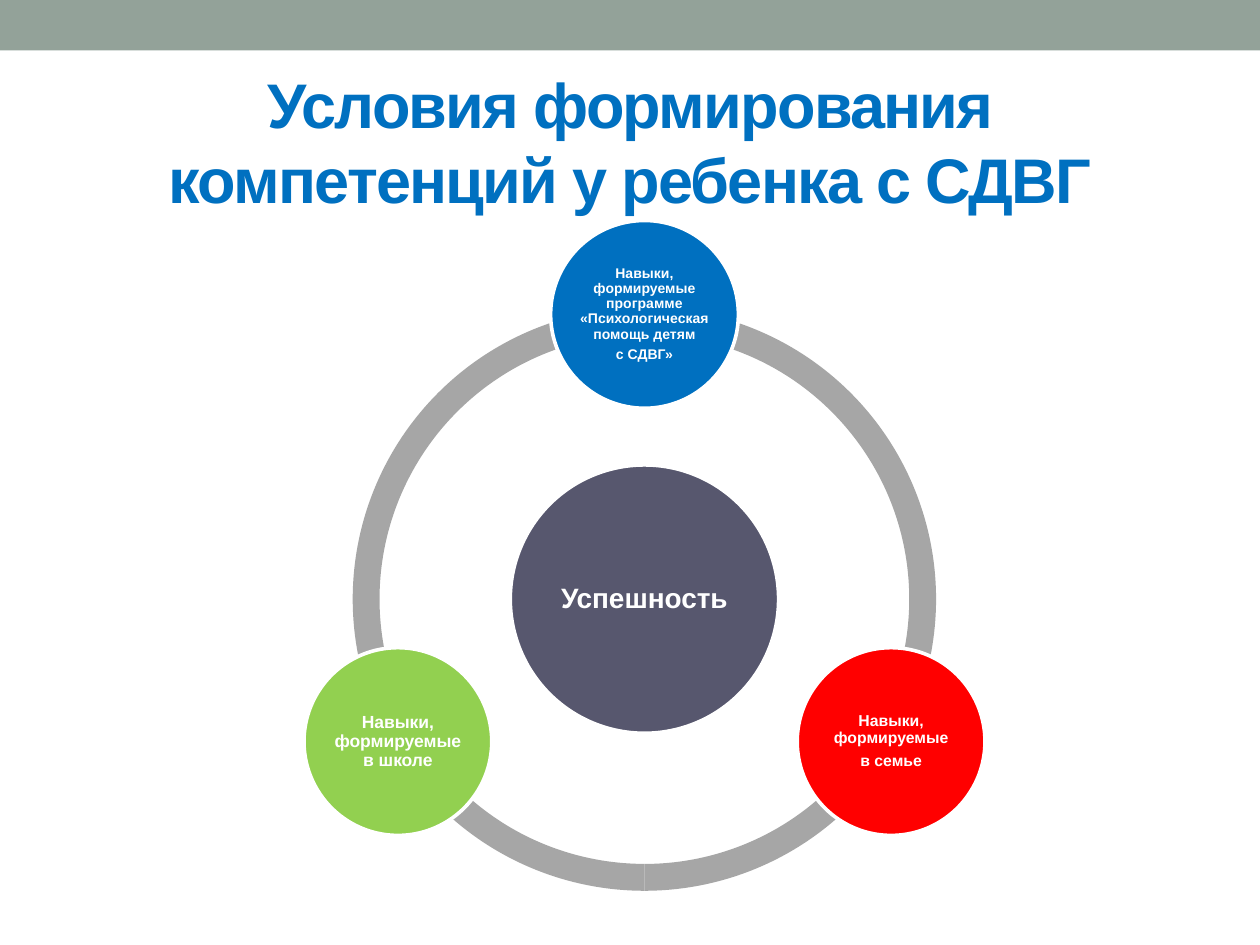
import math
from dataclasses import dataclass

from pptx import Presentation
from pptx import util as u
from pptx.dml.color import RGBColor
from pptx.enum import shapes, text


@dataclass(frozen=True)
class Theme:
    font: str = "Arial"
    band: str = "93A299"
    accent: str = "0070C0"
    ring: str = "A6A6A6"
    core: str = "57576E"
    family: str = "FF0000"
    school: str = "92D050"
    light: str = "FFFFFF"
    title_size: int = 36
    core_size: int = 16
    program_size: int = 8
    family_size: int = 9
    school_size: int = 10
    outline: float = 2.08


THEME = Theme()
WIDTH, HEIGHT = u.Inches(10), u.Inches(7.5)
CENTER_X, CENTER_Y = 0.5115 * WIDTH, 0.634 * HEIGHT
RING = 0.463 * WIDTH
ORBIT = 0.226 * WIDTH
CORE = 0.213 * WIDTH
SATELLITE = 0.149 * WIDTH


def color(value):
    return RGBColor.from_string(value)


def add_filled(page, kind, left, top, width, height, fill):
    shape = page.shapes.add_shape(kind, int(left), int(top), int(width), int(height))
    shape.shadow.inherit = False
    shape.fill.solid()
    shape.fill.fore_color.rgb = color(fill)
    shape.line.fill.background()
    return shape


def add_span(para, words, size, ink):
    span = para.add_run()
    span.text = words
    span.font.name = THEME.font
    span.font.size = u.Pt(size)
    span.font.bold = True
    span.font.color.rgb = color(ink)
    return span


def prepare_frame(frame, inset):
    frame.word_wrap = True
    frame.vertical_anchor = text.MSO_ANCHOR.MIDDLE
    frame.margin_left = frame.margin_right = u.Inches(inset)
    frame.margin_top = frame.margin_bottom = u.Inches(inset)


def add_title(page, words):
    box = page.shapes.add_textbox(
        int(0.05 * WIDTH), int(0.077 * HEIGHT), int(0.9 * WIDTH), int(0.144 * HEIGHT)
    )
    prepare_frame(box.text_frame, 0.05)
    para = box.text_frame.paragraphs[0]
    para.alignment = text.PP_ALIGN.CENTER
    span = add_span(para, words, THEME.title_size, THEME.accent)
    span.font._element.set("spc", "-100")


def add_arc(page, start, end):
    arc = add_filled(
        page, shapes.MSO_SHAPE.BLOCK_ARC,
        CENTER_X - RING / 2, CENTER_Y - RING / 2, RING, RING, THEME.ring,
    )
    for index, value in enumerate((start * 0.6, end * 0.6, 0.046)):
        arc.adjustments[index] = value


def add_circle(page, x, y, diameter, fill, lines, size, inset):
    circle = add_filled(
        page, shapes.MSO_SHAPE.OVAL,
        x - diameter / 2, y - diameter / 2, diameter, diameter, fill,
    )
    circle.line.color.rgb = color(THEME.light)
    circle.line.width = u.Pt(THEME.outline)
    frame = circle.text_frame
    prepare_frame(frame, inset)
    for index, words in enumerate(lines):
        para = frame.add_paragraph() if index else frame.paragraphs[0]
        para.alignment = text.PP_ALIGN.CENTER
        para.line_spacing = 0.9
        para.space_after = u.Pt(0.35 * size)
        add_span(para, words, size, THEME.light)


def add_satellite(page, degrees, fill, lines, size):
    angle = math.radians(degrees)
    x = CENTER_X + ORBIT * math.cos(angle)
    y = CENTER_Y + ORBIT * math.sin(angle)
    add_circle(page, x, y, SATELLITE, fill, lines, size, 0.01)


def main():
    deck = Presentation()
    deck.slide_width, deck.slide_height = WIDTH, HEIGHT
    page = deck.slides.add_slide(deck.slide_layouts[6])

    add_filled(page, shapes.MSO_SHAPE.RECTANGLE, 0, 0, WIDTH, 0.4 / 7.5 * HEIGHT, THEME.band)
    add_title(page, "Условия формирования компетенций у ребенка с СДВГ")

    for start, end in ((90, 162), (18, 90), (162, 18)):
        add_arc(page, start, end)

    add_circle(page, CENTER_X, CENTER_Y, CORE, THEME.core,
               ["Успешность"], THEME.core_size, 0.02)

    satellites = (
        (THEME.accent, THEME.program_size,
         ["Навыки, формируемые программе «Психологическая помощь детям", "с СДВГ»"]),
        (THEME.family, THEME.family_size, ["Навыки, формируемые", "в семье"]),
        (THEME.school, THEME.school_size, ["Навыки, формируемые в школе"]),
    )
    for index, (fill, size, lines) in enumerate(satellites):
        add_satellite(page, -90 + 120 * index, fill, lines, size)

    deck.save("out.pptx")


if __name__ == "__main__":
    main()
